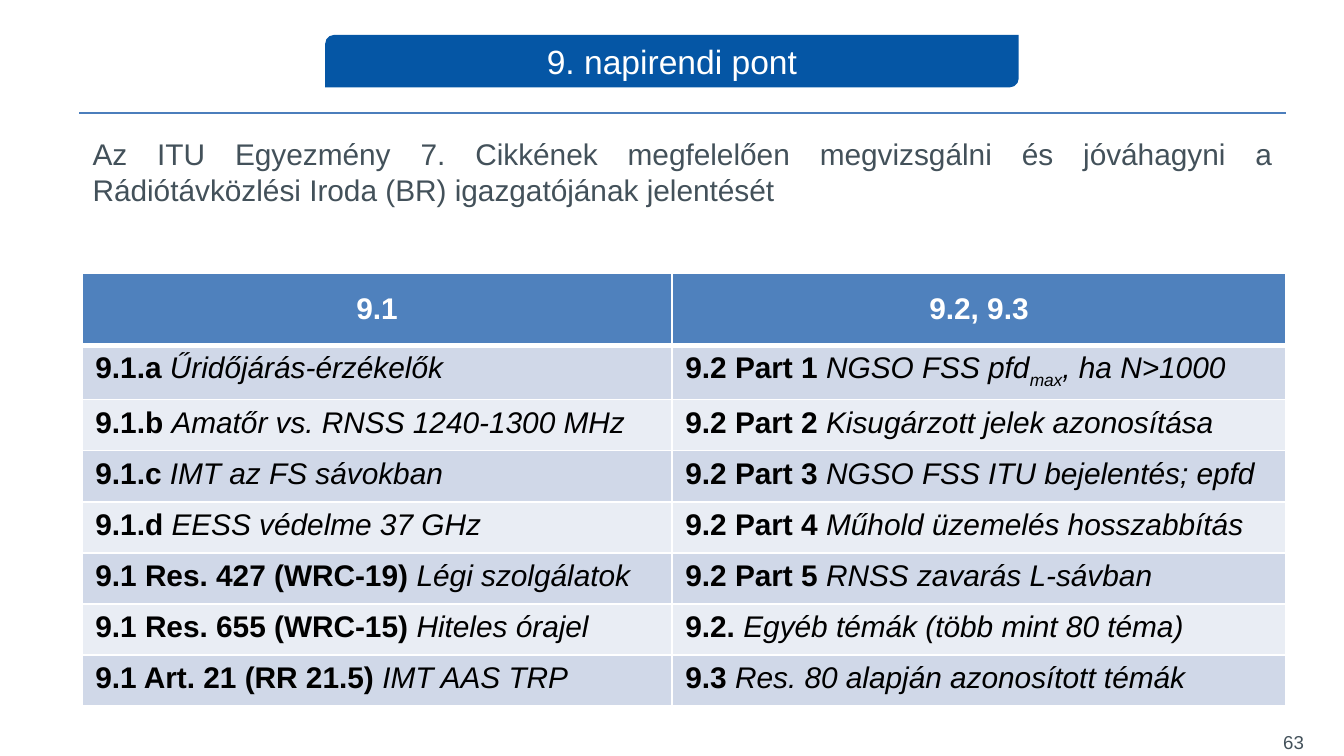
"""Build the slide on agenda item 9 with its two-column table of topics."""
from lxml import etree
from pptx import Presentation
from pptx.dml.color import RGBColor
from pptx.enum import shapes, text
from pptx.oxml import ns
from pptx.util import Inches, Pt

COLORS = {"banner": "0556A5", "rule": "4B7EBC", "body": "43515A", "header": "4F81BD",
          "odd": "D0D8E8", "even": "E9EDF4", "white": "FFFFFF", "black": "000000"}
TITLE = "9. napirendi pont"
INTRO = ("Az ITU Egyezmény 7. Cikkének megfelelően megvizsgálni és jóváhagyni a "
         "Rádiótávközlési Iroda (BR) igazgatójának jelentését")
PAGE_NUMBER = "63"
HEADERS = ["9.1", "9.2, 9.3"]
TOPICS = [
    (("9.1.a ", "Űridőjárás-érzékelők"),
     ("9.2 Part 1 ", "NGSO FSS pfd", "max", ", ha N>1000")),
    (("9.1.b ", "Amatőr vs. RNSS 1240-1300 MHz"),
     ("9.2 Part 2 ", "Kisugárzott jelek azonosítása")),
    (("9.1.c ", "IMT az FS sávokban"),
     ("9.2 Part 3 ", "NGSO FSS ITU bejelentés; epfd")),
    (("9.1.d ", "EESS védelme 37 GHz"),
     ("9.2 Part 4 ", "Műhold üzemelés hosszabbítás")),
    (("9.1 Res. 427 (WRC-19) ", "Légi szolgálatok"),
     ("9.2 Part 5 ", "RNSS zavarás L-sávban")),
    (("9.1 Res. 655 (WRC-15) ", "Hiteles órajel"),
     ("9.2. ", "Egyéb témák (több mint 80 téma)")),
    (("9.1 Art. 21 (RR 21.5) ", "IMT AAS TRP"),
     ("9.3 ", "Res. 80 alapján azonosított témák")),
]
COLUMN_WIDTHS = [4.39, 4.57]
HEADER_HEIGHT, ROW_HEIGHT = 0.54, 0.38


def color(name):
    return RGBColor.from_string(COLORS[name])


def add_span(para, words, size=16, ink="black", bold=False, italic=False, baseline=None):
    span = para.add_run()
    span.text = words
    font = span.font
    font.name, font.size, font.bold, font.italic = "Arial", Pt(size), bold, italic
    font.color.rgb = color(ink)
    if baseline is not None:
        font._element.set("baseline", str(baseline))


def add_label(page, words, place, align, **look):
    box = page.shapes.add_textbox(*map(Inches, place))
    box.text_frame.word_wrap = True
    para = box.text_frame.paragraphs[0]
    para.alignment = align
    add_span(para, words, **look)


def style_cell(cell, fill, bottom=1):
    properties = cell._tc.get_or_add_tcPr()
    for side, width in (("L", 1), ("R", 1), ("T", 1), ("B", bottom)):
        edge = etree.SubElement(properties, ns.qn(f"a:ln{side}"), w=str(Pt(width)))
        paint = etree.SubElement(edge, ns.qn("a:solidFill"))
        etree.SubElement(paint, ns.qn("a:srgbClr"), val=COLORS["white"])
    cell.fill.solid()
    cell.fill.fore_color.rgb = color(fill)


def add_topics(page):
    height = HEADER_HEIGHT + ROW_HEIGHT * len(TOPICS)
    frame = page.shapes.add_table(len(TOPICS) + 1, len(HEADERS), Inches(0.61), Inches(2.03),
                                  Inches(sum(COLUMN_WIDTHS)), Inches(height))
    table = frame.table
    for column, width in zip(table.columns, COLUMN_WIDTHS):
        column.width = Inches(width)
    for index, row in enumerate(table.rows):
        row.height = Inches(ROW_HEIGHT if index else HEADER_HEIGHT)
    for index, heading in enumerate(HEADERS):
        cell = table.cell(0, index)
        style_cell(cell, "header", bottom=3)
        cell.vertical_anchor = text.MSO_ANCHOR.MIDDLE
        para = cell.text_frame.paragraphs[0]
        para.alignment = text.PP_ALIGN.CENTER
        add_span(para, heading, ink="white", bold=True)
    for row, topics in enumerate(TOPICS, 1):
        for column, (number, subject, *rest) in enumerate(topics):
            cell = table.cell(row, column)
            style_cell(cell, "odd" if row % 2 else "even")
            para = cell.text_frame.paragraphs[0]
            add_span(para, number, bold=True)
            add_span(para, subject, italic=True)
            for words, baseline in zip(rest, (-25000, 0)):
                add_span(para, words, italic=True, baseline=baseline)


def add_rule(page):
    rule = page.shapes.add_connector(shapes.MSO_CONNECTOR.STRAIGHT, Inches(0.59), Inches(0.84),
                                     Inches(9.57), Inches(0.84))
    rule.line.color.rgb = color("rule")
    rule.line.width = Pt(0.75)
    etree.SubElement(rule._element.spPr, ns.qn("a:effectLst"))


def add_banner(page):
    banner = page.shapes.add_shape(shapes.MSO_SHAPE.ROUND_2_DIAG_RECTANGLE, Inches(2.42),
                                   Inches(0.26), Inches(5.16), Inches(0.39))
    banner.shadow.inherit = False
    banner.fill.solid()
    banner.fill.fore_color.rgb = color("banner")
    banner.line.fill.background()
    banner.text_frame.vertical_anchor = text.MSO_ANCHOR.MIDDLE
    para = banner.text_frame.paragraphs[0]
    para.alignment = text.PP_ALIGN.CENTER
    add_span(para, TITLE, size=18, ink="white")


def main():
    deck = Presentation()
    deck.slide_width = Inches(10)
    deck.slide_height = deck.slide_width * 9 // 16
    page = deck.slides.add_slide(deck.slide_layouts[6])
    add_label(page, PAGE_NUMBER, (9.33, 5.39, 0.47, 0.3), text.PP_ALIGN.RIGHT,
              size=10, ink="body")
    add_rule(page)
    add_label(page, INTRO, (0.59, 0.96, 8.98, 0.64), text.PP_ALIGN.JUSTIFY, ink="body")
    add_topics(page)
    add_banner(page)
    deck.save("out.pptx")


if __name__ == "__main__":
    main()
